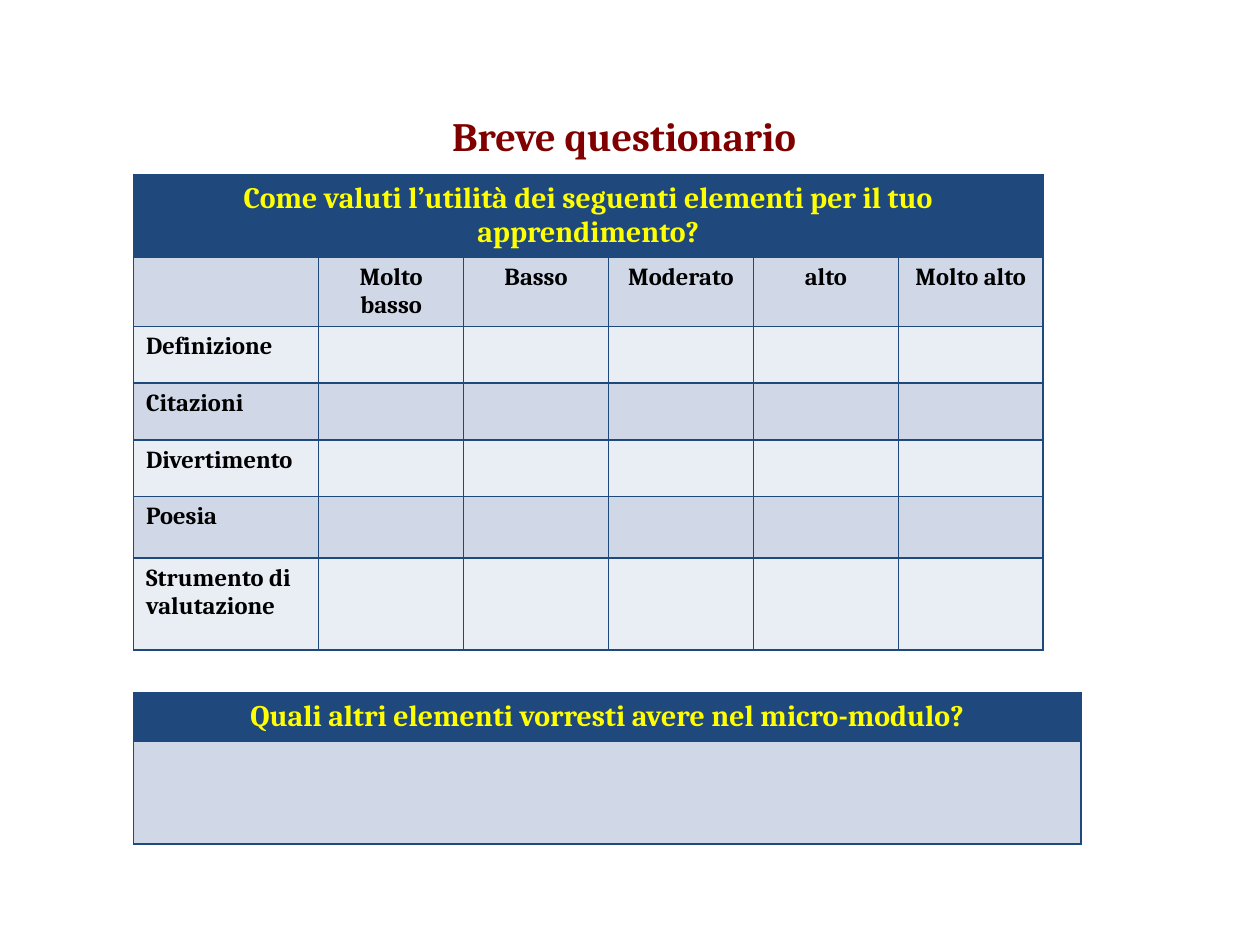
"""Build a questionnaire slide with a rating table and an open-question table."""
from dataclasses import dataclass

import lxml.etree
import pptx
import pptx.dml.color
import pptx.enum.text
import pptx.oxml.ns
import pptx.table
import pptx.util

Inches = pptx.util.Inches
Align = pptx.enum.text.PP_ALIGN


@dataclass(frozen=True)
class Theme:
    font: str = "Cambria"
    title: str = "800000"
    navy: str = "1F497D"
    yellow: str = "FFFF00"
    black: str = "000000"
    bands: tuple[str, str] = ("D0D8E8", "E9EDF4")
    title_size: int = 23
    header_size: int = 17
    body_size: int = 14
    border: float = 1


@dataclass(frozen=True)
class Grid:
    heading: str
    left: float
    top: float
    widths: list[float]
    heights: list[float]
    body: list[list[str]]


THEME = Theme()
LEVELS = ["Molto basso", "Basso", "Moderato", "alto", "Molto alto"]
ITEMS = ["Definizione", "Citazioni", "Divertimento", "Poesia", "Strumento di valutazione"]
GRIDS = [
    Grid(
        "Come valuti l’utilità dei seguenti elementi per il tuo apprendimento?",
        1.06, 1.39, [1.47] + [1.15] * len(LEVELS),
        [0.65, 0.55, 0.45, 0.45, 0.45, 0.49, 0.73],
        [["", *LEVELS]] + [[item] + [""] * len(LEVELS) for item in ITEMS],
    ),
    Grid(
        "Quali altri elementi vorresti avere nel micro-modulo?",
        1.06, 5.5, [7.52], [0.38, 0.82], [[""]],
    ),
]


def rgb(color: str) -> pptx.dml.color.RGBColor:
    return pptx.dml.color.RGBColor.from_string(color)


def write(tf, text: str, size: int, color: str, align: Align) -> None:
    p = tf.paragraphs[0]
    p.text = text
    p.alignment = align
    p.font.name = THEME.font
    p.font.size = pptx.util.Pt(size)
    p.font.bold = True
    p.font.color.rgb = rgb(color)


def style_cell(cell: pptx.table._Cell, fill: str) -> None:
    qn = pptx.oxml.ns.qn
    props = cell._tc.get_or_add_tcPr()
    for side in ("lnL", "lnR", "lnT", "lnB"):
        line = lxml.etree.SubElement(props, qn(f"a:{side}"), w=str(pptx.util.Pt(THEME.border)))
        solid = lxml.etree.SubElement(line, qn("a:solidFill"))
        lxml.etree.SubElement(solid, qn("a:srgbClr"), val=THEME.navy)
    cell.fill.solid()
    cell.fill.fore_color.rgb = rgb(fill)


def draw_grid(s, grid: Grid) -> None:
    columns = len(grid.widths)
    frame = s.shapes.add_table(
        len(grid.heights), columns, Inches(grid.left), Inches(grid.top),
        Inches(sum(grid.widths)), Inches(sum(grid.heights)),
    )
    table = frame.table
    for column, width in zip(table.columns, grid.widths):
        column.width = Inches(width)
    for row, height in zip(table.rows, grid.heights):
        row.height = Inches(height)
    for cell in table.rows[0].cells:
        style_cell(cell, THEME.navy)
    heading = table.cell(0, 0)
    if columns > 1:
        heading.merge(table.cell(0, columns - 1))
    write(heading.text_frame, grid.heading, THEME.header_size, THEME.yellow, Align.CENTER)
    for i, texts in enumerate(grid.body):
        for j, text in enumerate(texts):
            cell = table.cell(i + 1, j)
            style_cell(cell, THEME.bands[i % 2])
            if text:
                align = Align.LEFT if j == 0 else Align.CENTER
                write(cell.text_frame, text, THEME.body_size, THEME.black, align)


def draw_title(s, text: str) -> None:
    sp = s.shapes.title
    sp.left, sp.top, sp.width, sp.height = map(Inches, (2.33, 0.83, 5.25, 0.63))
    tf = sp.text_frame
    tf.vertical_anchor = pptx.enum.text.MSO_ANCHOR.TOP
    tf.word_wrap = True
    write(tf, text, THEME.title_size, THEME.title, Align.CENTER)


def main() -> None:
    prs = pptx.Presentation()
    prs.slide_width, prs.slide_height = Inches(10), Inches(7.5)
    s = prs.slides.add_slide(prs.slide_layouts[5])
    draw_title(s, "Breve questionario")
    for grid in GRIDS:
        draw_grid(s, grid)
    prs.save("out.pptx")


if __name__ == "__main__":
    main()
